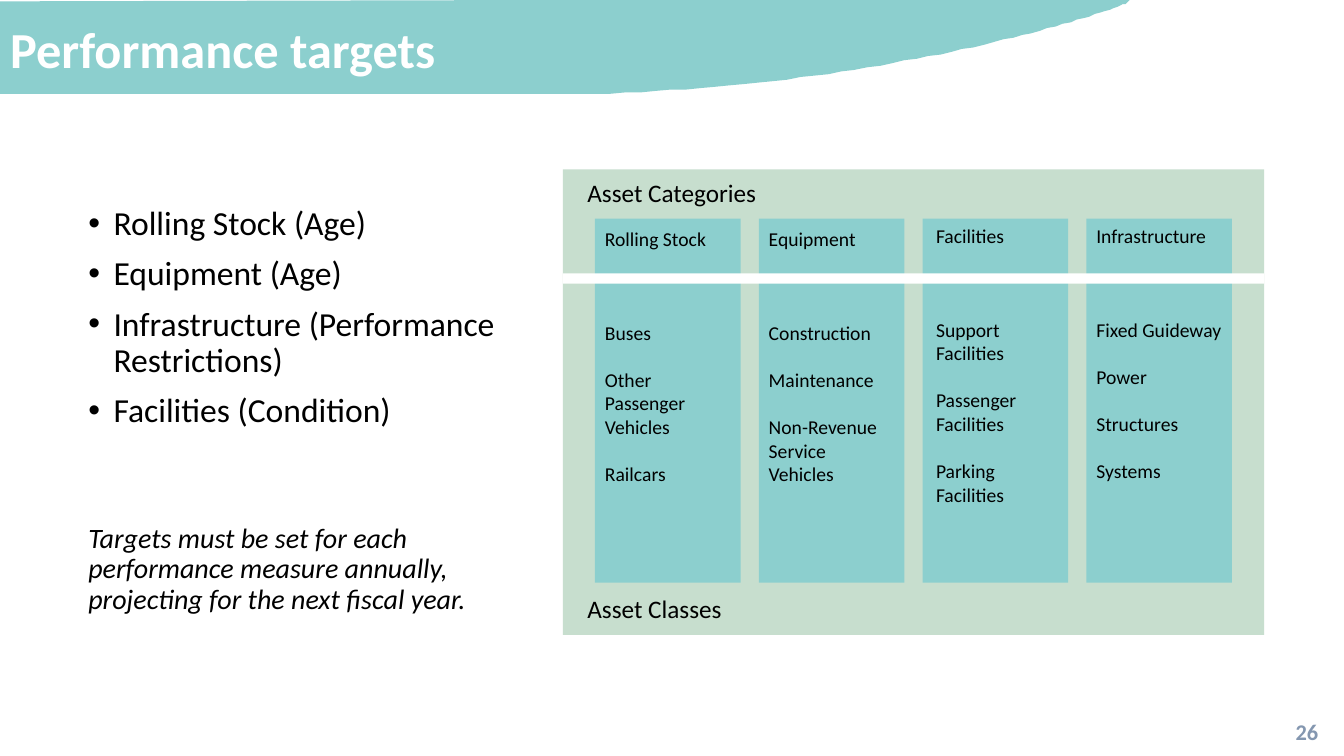
from dataclasses import dataclass

from pptx import Presentation
from pptx.dml.color import RGBColor
from pptx.enum import shapes, text
from pptx.oxml import parse_xml
from pptx.oxml.ns import nsdecls
from pptx.util import Pt


@dataclass(frozen=True)
class Theme:
    font: str = "Calibri"
    teal: str = "8CCFCE"
    sage: str = "C7DECE"
    white: str = "FFFFFF"
    black: str = "000000"
    slate: str = "8497B0"
    title: float = 36
    bullet: float = 24
    note: float = 20
    label: float = 18
    page: float = 16
    card: float = 14


@dataclass(frozen=True)
class Box:
    left: float
    top: float
    width: float
    height: float


@dataclass(frozen=True)
class Line:
    words: str
    before: float = 0


@dataclass(frozen=True)
class Category:
    name: str
    classes: tuple[str, ...]
    text_shift: float = 0
    text_top: float = 156.2


THEME = Theme()
PANEL = Box(402, 121, 501, 332.5)
CARD = Box(425, 156.2, 104, 260)
CARD_STEP = 117
BLANK_LINE = 16.8
CATEGORIES = (
    Category("Rolling Stock", ("Buses", "Other Passenger\nVehicles", "Railcars"), text_top=158.4),
    Category("Equipment", ("Construction", "Maintenance", "Non-Revenue\nService\nVehicles"),
             text_top=158.4),
    Category("Facilities", ("Support\nFacilities", "Passenger\nFacilities", "Parking\nFacilities"),
             text_shift=2.5),
    Category("Infrastructure", ("Fixed Guideway", "Power", "Structures", "Systems")),
)
BULLETS = (
    "Rolling Stock (Age)",
    "Equipment (Age)",
    "Infrastructure (Performance Restrictions)",
    "Facilities (Condition)",
)


def place(shape, box: Box) -> None:
    shape.left, shape.top = Pt(box.left), Pt(box.top)
    shape.width, shape.height = Pt(box.width), Pt(box.height)


def paint(shape, color: str) -> None:
    shape.shadow.inherit = False
    shape.fill.solid()
    shape.fill.fore_color.rgb = RGBColor.from_string(color)
    shape.line.fill.background()


def add_block(slide, box: Box, color: str) -> None:
    shape = slide.shapes.add_shape(
        shapes.MSO_SHAPE.RECTANGLE, Pt(box.left), Pt(box.top), Pt(box.width), Pt(box.height))
    paint(shape, color)


def add_bullet(paragraph) -> None:
    properties = paragraph._p.get_or_add_pPr()
    properties.set("marL", str(Pt(18)))
    properties.set("indent", str(-Pt(18)))
    properties.append(parse_xml(f'<a:buFont {nsdecls("a")} typeface="Arial"/>'))
    properties.append(parse_xml(f'<a:buChar {nsdecls("a")} char="•"/>'))


def write(shape, lines: list[Line], *, size: float, color: str = THEME.black,
          bold: bool = False, italic: bool = False, bulleted: bool = False,
          spacing: float = 1, align=text.PP_ALIGN.LEFT,
          anchor=text.MSO_ANCHOR.TOP, right_inset: float = 7.2) -> None:
    frame = shape.text_frame
    frame.word_wrap = True
    frame.auto_size = text.MSO_AUTO_SIZE.NONE
    frame.vertical_anchor = anchor
    frame.margin_left, frame.margin_right = Pt(7.2), Pt(right_inset)
    frame.margin_top = frame.margin_bottom = Pt(3.6)
    for index, line in enumerate(lines):
        paragraph = frame.add_paragraph() if index else frame.paragraphs[0]
        paragraph.alignment = align
        paragraph.line_spacing = spacing
        paragraph.space_before = Pt(line.before)
        if bulleted:
            add_bullet(paragraph)
        run = paragraph.add_run()
        run.text = line.words
        run.font.name, run.font.size = THEME.font, Pt(size)
        run.font.bold, run.font.italic = bold, italic
        run.font.color.rgb = RGBColor.from_string(color)


def add_text(slide, box: Box, lines: list[Line], **style) -> None:
    shape = slide.shapes.add_textbox(
        Pt(box.left), Pt(box.top), Pt(box.width), Pt(box.height))
    write(shape, lines, **style)


def add_banner(slide) -> None:
    """Draw the title band, its right edge sampled from a cubic curve."""
    controls = ((805, 0), (826, 0), (625, 67), (402.5, 67))
    steps = 60
    edge = []
    for step in range(steps + 1):
        t = step / steps
        weights = ((1 - t) ** 3, 3 * t * (1 - t) ** 2, 3 * t * t * (1 - t), t ** 3)
        edge.append(tuple(
            sum(weight * point[axis] for weight, point in zip(weights, controls))
            for axis in (0, 1)))
    builder = slide.shapes.build_freeform(-1.4, 0.7, scale=float(Pt(1)))
    builder.add_line_segments([(410, 0), *edge, (0, 67)], close=True)
    banner = builder.convert_to_shape()
    paint(banner, THEME.teal)
    slide.shapes.title.element.addprevious(banner.element)


def category_lines(category: Category) -> list[Line]:
    lines = [Line(category.name)]
    for index, asset_class in enumerate(category.classes):
        first, *rest = asset_class.split("\n")
        lines.append(Line(first, BLANK_LINE if index else 3 * BLANK_LINE))
        lines.extend(Line(words) for words in rest)
    return lines


def add_asset_panel(slide) -> None:
    add_block(slide, PANEL, THEME.sage)
    for words, top in (("Asset Categories", 123), ("Asset Classes", 420)):
        add_text(slide, Box(412.5, top, 173.5, 29), [Line(words)], size=THEME.label)
    for index, category in enumerate(CATEGORIES):
        left = CARD.left + index * CARD_STEP
        add_block(slide, Box(left, CARD.top, CARD.width, CARD.height), THEME.teal)
        add_text(slide, Box(left + category.text_shift, category.text_top, CARD.width, 227.5),
                 category_lines(category), size=THEME.card, right_inset=6)
    add_block(slide, Box(PANEL.left, 195.3, PANEL.width, 7.3), THEME.white)


def main() -> None:
    presentation = Presentation()
    presentation.slide_width, presentation.slide_height = Pt(960), Pt(540)
    slide = presentation.slides.add_slide(presentation.slide_layouts[5])

    title = slide.shapes.title
    place(title, Box(0, -15.1, 838, 104.4))
    write(title, [Line("Performance targets")], size=THEME.title, color=THEME.white,
          bold=True, spacing=0.9, anchor=text.MSO_ANCHOR.MIDDLE)
    add_banner(slide)

    bullets = [Line(words, 10 if index else 0) for index, words in enumerate(BULLETS)]
    add_text(slide, Box(56, 144, 356.5, 197), bullets,
             size=THEME.bullet, bulleted=True, spacing=0.9)
    note = ("Targets must be set for each performance measure annually, "
            "projecting for the next fiscal year.")
    add_text(slide, Box(56, 371, 297.5, 134), [Line(note)],
             size=THEME.note, italic=True, spacing=0.9)
    add_asset_panel(slide)
    add_text(slide, Box(911, 505, 45, 35), [Line("26")], size=THEME.page, color=THEME.slate,
             bold=True, align=text.PP_ALIGN.CENTER, anchor=text.MSO_ANCHOR.MIDDLE)
    presentation.save("out.pptx")


if __name__ == "__main__":
    main()
